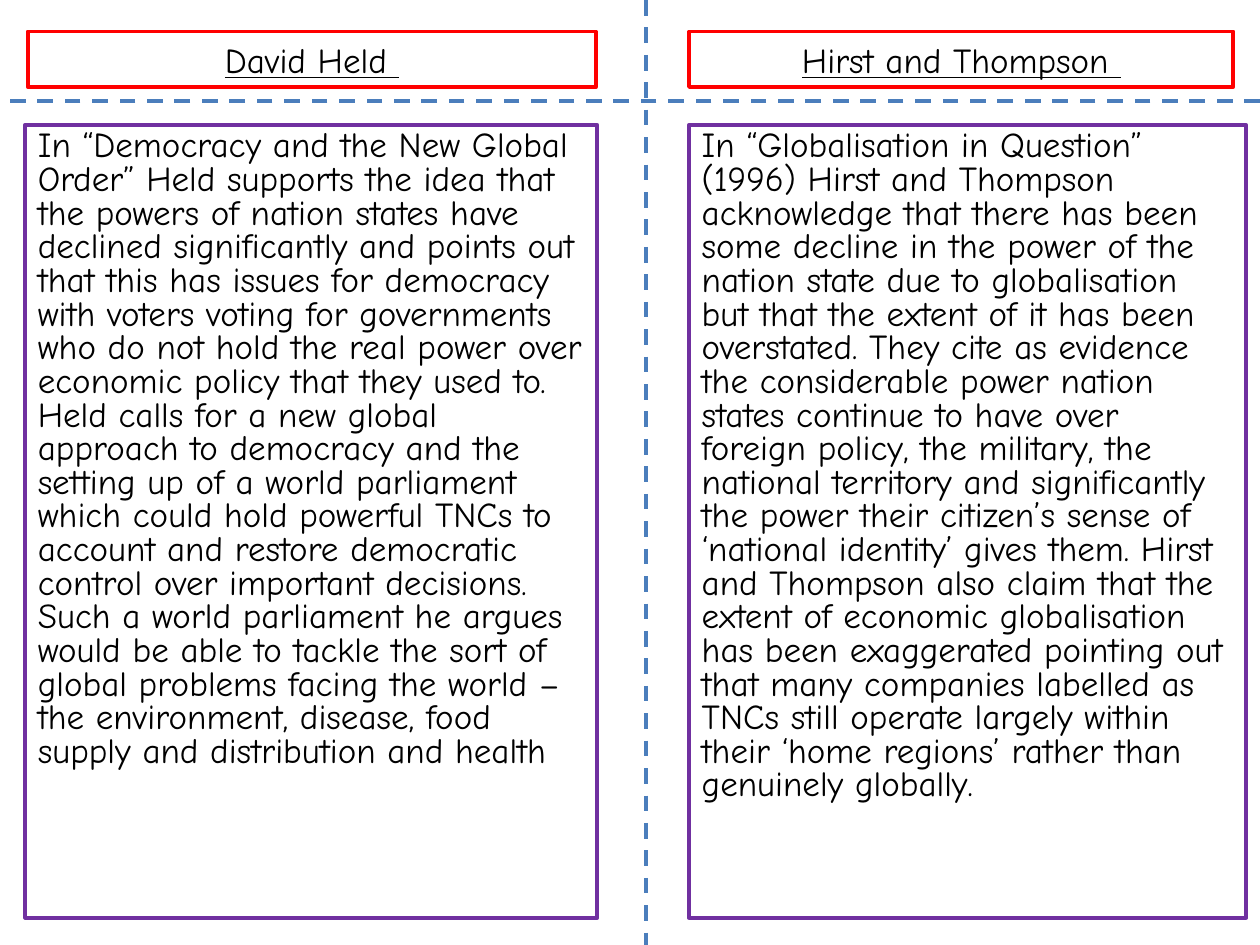
from lxml.etree import SubElement
from pptx import Presentation
from pptx.dml.color import RGBColor
from pptx.enum.dml import MSO_LINE_DASH_STYLE as Dash
from pptx.enum.shapes import MSO_CONNECTOR as Connector
from pptx.enum.text import MSO_ANCHOR as Anchor, MSO_AUTO_SIZE as AutoSize, PP_ALIGN as Align
from pptx.oxml.ns import qn
from pptx.util import Pt

COLORS = {"text": "000000", "heading": "FF0000", "body": "7030A0", "divider": "4B7EBC"}
FONT = "Comic Neue"
TEXT_SIZE = 20
LINE_WIDTH = 2.25
WIDTH, HEIGHT = 720, 540
COMPARISON_LAYOUT = 4
HEADING_TOP, HEADING_HEIGHT = 18, 31.7
BODY_TOP, BODY_HEIGHT = 71.3, 453.2

HELD = [
    "In “Democracy and the New Global Order” Held supports the idea that the powers of "
    "nation states have declined significantly and points out that this has issues for "
    "democracy with voters voting for governments who do not hold the real power over "
    "economic policy that they used to.",
    "Held calls for a new global approach to democracy and the setting up of a world "
    "parliament which could hold powerful TNCs to account and restore democratic control "
    "over important decisions.",
    "Such a world parliament he argues would be able to tackle the sort of global problems "
    "facing the world – the environment, disease, food supply and distribution and health",
]
HIRST_THOMPSON = [
    "In “Globalisation in Question” (1996) Hirst and Thompson acknowledge that there has "
    "been some decline in the power of the nation state due to globalisation but that the "
    "extent of it has been overstated. They cite as evidence the considerable power nation "
    "states continue to have over foreign policy, the military, the national territory and "
    "significantly the power their citizen’s sense of ‘national identity’ gives them. Hirst "
    "and Thompson also claim that the extent of economic globalisation has been exaggerated "
    "pointing out that many companies labelled as TNCs still operate largely within their "
    "‘home regions’ rather than genuinely globally.",
]


def style_line(line, color):
    line.color.rgb = RGBColor.from_string(COLORS[color])
    line.width = Pt(LINE_WIDTH)


def fill_box(box, place, texts, color, anchor, align, spacing, underline):
    """Place a text placeholder, outline it and set its text without bullets."""
    box.left, box.top, box.width, box.height = map(Pt, place)
    style_line(box.line, color)
    frame = box.text_frame
    frame.text = "\n".join(texts)
    frame.word_wrap = True
    frame.auto_size = AutoSize.NONE
    frame.vertical_anchor = anchor
    for para in frame.paragraphs:
        para.alignment = align
        para.line_spacing = spacing
        para.space_before = Pt(0)
        properties = para._p.get_or_add_pPr()
        properties.set("marL", "0")
        properties.set("indent", "0")
        SubElement(properties, qn("a:buNone"))
        for span in para.runs:
            font = span.font
            font.name, font.size = FONT, Pt(TEXT_SIZE)
            font.bold, font.underline = False, underline
            font.color.rgb = RGBColor.from_string(COLORS["text"])


def add_column(heading, body, heading_span, body_span, title, texts):
    """Fill one thinker's column; each span is a left edge and a width."""
    left, width = heading_span
    fill_box(heading, (left, HEADING_TOP, width, HEADING_HEIGHT), [title],
             "heading", Anchor.MIDDLE, Align.CENTER, 1.0, True)
    left, width = body_span
    fill_box(body, (left, BODY_TOP, width, BODY_HEIGHT), texts,
             "body", Anchor.TOP, Align.LEFT, 0.8, False)


def add_divider(slide, start, end):
    divider = slide.shapes.add_connector(Connector.STRAIGHT, *map(Pt, start + end))
    style_line(divider.line, "divider")
    divider.line.dash_style = Dash.DASH
    SubElement(divider._element.spPr, qn("a:effectLst"))


def main():
    deck = Presentation()
    deck.slide_width, deck.slide_height = Pt(WIDTH), Pt(HEIGHT)
    slide = deck.slides.add_slide(deck.slide_layouts[COMPARISON_LAYOUT])
    title, *boxes = slide.placeholders
    title._element.getparent().remove(title._element)

    add_column(*boxes[:2], (15.8, 324.7), (14.4, 326.9), "David Held ", HELD)
    add_column(*boxes[2:4], (393.8, 311), (393.8, 318.2), "Hirst and Thompson ", HIRST_THOMPSON)
    add_divider(slide, (369.4, 0), (369.4, HEIGHT))
    add_divider(slide, (WIDTH, 57.6), (-7.9, 57.6))
    deck.save("out.pptx")


if __name__ == "__main__":
    main()
